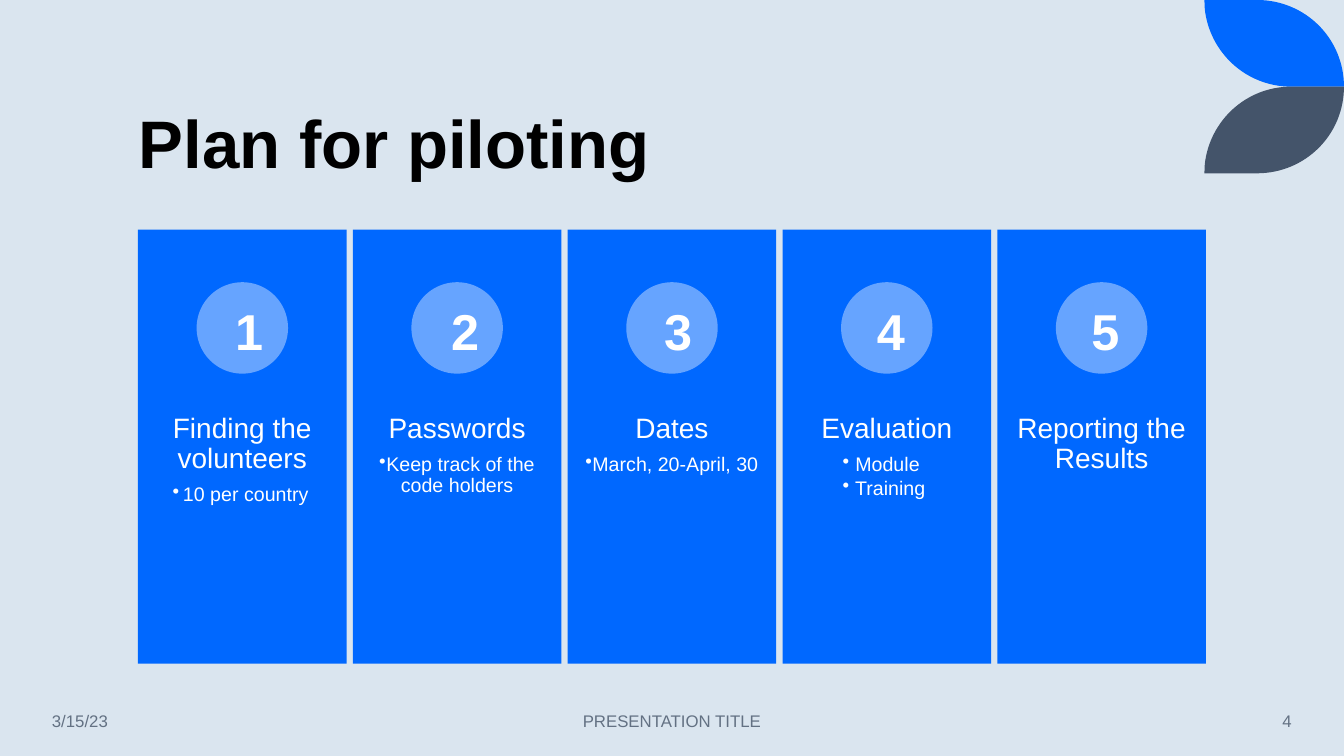
from pptx import Presentation
from pptx import util as u
from pptx.dml.color import RGBColor
from pptx.enum import shapes, text
from pptx.oxml.ns import qn
from lxml import etree

BACKGROUND = RGBColor(0xDA, 0xE5, 0xEF)
BLUE = RGBColor(0x00, 0x68, 0xFF)
LIGHT_BLUE = RGBColor(0x66, 0xA4, 0xFF)
SLATE = RGBColor(0x44, 0x54, 0x6A)
GREY = RGBColor(0x63, 0x71, 0x83)
BLACK = RGBColor(0x00, 0x00, 0x00)
WHITE = RGBColor(0xFF, 0xFF, 0xFF)

SLIDE_WIDTH, SLIDE_HEIGHT = 960, 540
LEAF_HEIGHT = 61.9
UNITS_PER_POINT = 100
COLUMN_LEFT, COLUMN_TOP, COLUMN_STEP = 98.6, 164.1, 153.45
COLUMN_WIDTH, COLUMN_HEIGHT = 149, 310
CIRCLE_SIZE = 65.3

# Heading, details, bullet indent and left edge of the number
STEPS = [
    ("Finding the volunteers", ["10 per country"], 7.4, 160.8),
    ("Passwords", ["Keep track of the code holders"], 5.2, 315.2),
    ("Dates", ["March, 20-April, 30"], 5, 467.2),
    ("Evaluation", ["Module ", "Training"], 9, 619.2),
    ("Reporting the Results", [], 9, 772.4),
]

HEADING = {"size": u.Pt(20), "color": WHITE}
DETAIL = {"size": u.Pt(14), "color": WHITE}
NUMBER = {"size": u.Pt(36), "color": WHITE, "bold": True}
TITLE = {"size": u.Pt(48), "color": BLACK, "bold": True}
FOOTER = {"size": u.Pt(12), "color": GREY}

LEFT, CENTER, RIGHT = text.PP_ALIGN.LEFT, text.PP_ALIGN.CENTER, text.PP_ALIGN.RIGHT


def set_attributes(target, values):
    for name, value in values.items():
        setattr(target, name, value)


def paint(shape, color):
    shape.shadow.inherit = False
    shape.fill.solid()
    shape.fill.fore_color.rgb = color
    shape.line.fill.background()


def add_filled_shape(slide, kind, box, color):
    shape = slide.shapes.add_shape(kind, *map(u.Pt, box))
    paint(shape, color)


def add_text_frame(slide, box, **frame_format):
    frame = slide.shapes.add_textbox(*map(u.Pt, box)).text_frame
    set_attributes(frame, {"word_wrap": True, **frame_format})
    return frame


def write(paragraph, words, font_format, **paragraph_format):
    set_attributes(paragraph, paragraph_format)
    run = paragraph.add_run()
    run.text = words
    values = {"name": "Arial", **font_format}
    run.font.color.rgb = values.pop("color")
    set_attributes(run.font, values)


def add_bullet(paragraph, indent):
    properties = paragraph._p.get_or_add_pPr()
    properties.set("marL", "0")
    properties.set("indent", str(-u.Pt(indent)))
    etree.SubElement(properties, qn("a:buChar")).set("char", "•")


def bend(segments):
    """Turn three line segments into one cubic curve through their end points."""
    first, *others = segments
    curve = etree.Element(qn("a:cubicBezTo"))
    first.addprevious(curve)
    for segment in segments:
        curve.append(segment[0])
        segment.getparent().remove(segment)


def add_leaf(slide, color, mirrored):
    """Draw a leaf in the top right corner; mirrored puts it upside down below."""
    outline = [
        (860.3, 0), (897.8, 0),
        (932.3, 0), (960, 27.4), (960, LEAF_HEIGHT),
        (922.3, LEAF_HEIGHT),
        (890, LEAF_HEIGHT), (864, 37.4), (860.6, 6.5),
    ]
    if mirrored:
        outline = [(x, 2 * LEAF_HEIGHT - y) for x, y in outline]
    points = [(round(x * UNITS_PER_POINT), round(y * UNITS_PER_POINT)) for x, y in outline]
    builder = slide.shapes.build_freeform(*points[0], scale=u.Pt(1) / UNITS_PER_POINT)
    builder.add_line_segments(points[1:], close=True)
    leaf = builder.convert_to_shape()
    paint(leaf, color)
    segments = list(leaf._element.iter(qn("a:lnTo")))
    bend(segments[1:4])
    bend(segments[5:8])


def add_step(slide, index, heading, details, indent, number_left):
    left = COLUMN_LEFT + index * COLUMN_STEP
    circle_left = left + (COLUMN_WIDTH - CIRCLE_SIZE) / 2
    add_filled_shape(slide, shapes.MSO_SHAPE.RECTANGLE,
                     (left, COLUMN_TOP, COLUMN_WIDTH, COLUMN_HEIGHT), BLUE)
    add_filled_shape(slide, shapes.MSO_SHAPE.OVAL,
                     (circle_left, 201.6, CIRCLE_SIZE, CIRCLE_SIZE), LIGHT_BLUE)

    margins = {f"margin_{side}": u.Pt(8) for side in ("left", "top", "right", "bottom")}
    frame = add_text_frame(slide, (left, 288, COLUMN_WIDTH, 124), **margins)
    write(frame.paragraphs[0], heading, HEADING,
          alignment=CENTER, line_spacing=0.9, space_after=u.Pt(7.2))
    for detail in details:
        paragraph = frame.add_paragraph()
        write(paragraph, detail, DETAIL, level=1,
              alignment=CENTER, line_spacing=0.9, space_after=u.Pt(1.8))
        add_bullet(paragraph, indent)

    number = add_text_frame(slide, (number_left, 211, 27.4, 51),
                            auto_size=text.MSO_AUTO_SIZE.SHAPE_TO_FIT_TEXT)
    write(number.paragraphs[0], str(index + 1), NUMBER, alignment=CENTER)


def add_footer(slide, left, width, words, alignment):
    frame = add_text_frame(slide, (left, 500.5, width, 28.8),
                           vertical_anchor=text.MSO_ANCHOR.MIDDLE)
    write(frame.paragraphs[0], words, FOOTER, alignment=alignment)


def main():
    presentation = Presentation()
    presentation.slide_width = u.Pt(SLIDE_WIDTH)
    presentation.slide_height = u.Pt(SLIDE_HEIGHT)
    slide = presentation.slides.add_slide(presentation.slide_layouts[6])
    slide.background.fill.solid()
    slide.background.fill.fore_color.rgb = BACKGROUND

    add_leaf(slide, BLUE, mirrored=False)
    add_leaf(slide, SLATE, mirrored=True)

    title = add_text_frame(slide, (92, 30.2, 770, 104.4),
                           vertical_anchor=text.MSO_ANCHOR.BOTTOM)
    write(title.paragraphs[0], "Plan for piloting", TITLE, line_spacing=0.9)

    for index, step in enumerate(STEPS):
        add_step(slide, index, *step)

    add_footer(slide, 30, 134, "3/15/23", LEFT)
    add_footer(slide, 318, 324, "PRESENTATION TITLE", CENTER)
    add_footer(slide, 799.8, 130, "4", RIGHT)
    presentation.save("out.pptx")


if __name__ == "__main__":
    main()
